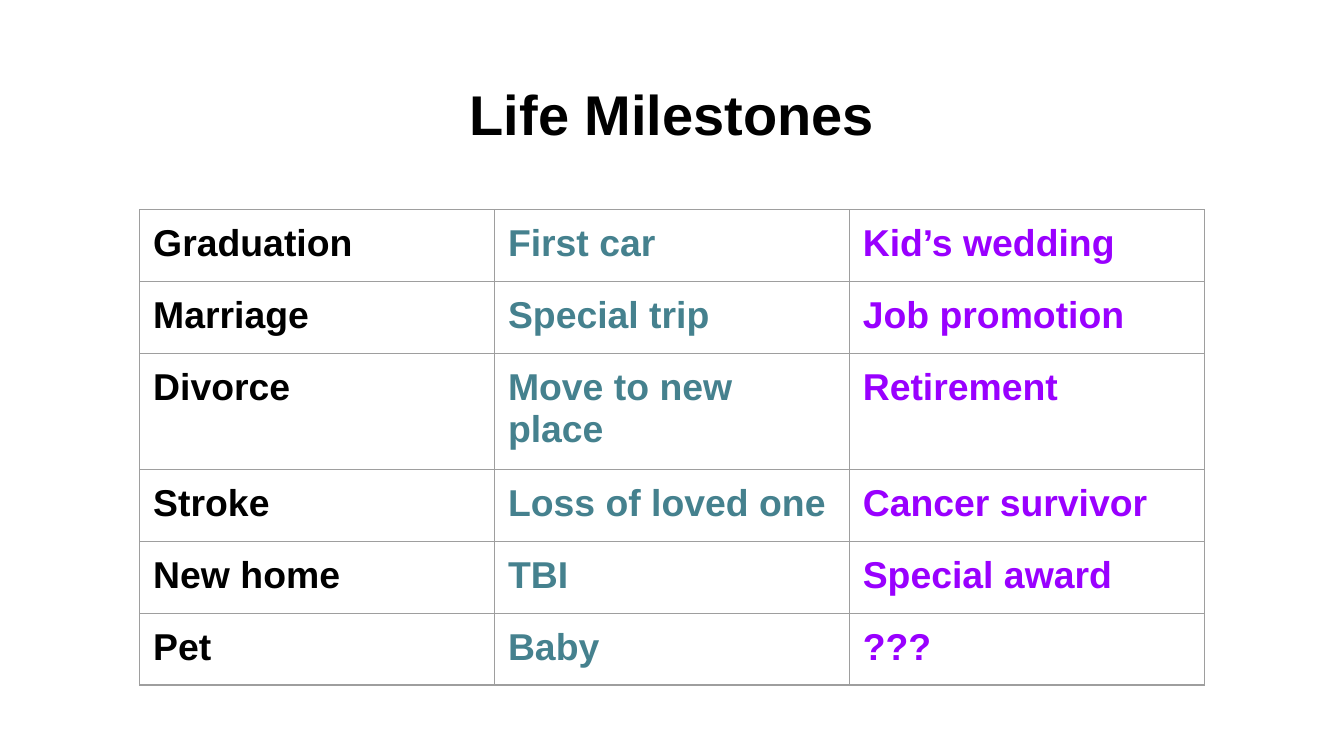
import pptx
import pptx.util
import pptx.dml.color
import pptx.enum.text
import lxml.etree
from pptx.util import Inches, Pt

TITLE = "Life Milestones"
COLUMNS = [
    ("000000", ["Graduation", "Marriage", "Divorce", "Stroke", "New home", "Pet"]),
    ("45818E", ["First car", "Special trip", "Move to new place",
                "Loss of loved one", "TBI", "Baby"]),
    ("9900FF", ["Kid’s wedding", "Job promotion", "Retirement",
                "Cancer survivor", "Special award", "???"]),
]
BORDER = "9E9E9E"
COLUMN_WIDTH = 2.64
ROW_HEIGHT = 0.42
INSET = Inches(0.1)


def rgb(value):
    return pptx.dml.color.RGBColor.from_string(value)


def write(paragraph, words, size, color):
    run = paragraph.add_run()
    run.text = words
    run.font.name = "Arial"
    run.font.size = Pt(size)
    run.font.bold = True
    run.font.color.rgb = rgb(color)


def set_insets(holder):
    holder.margin_left = holder.margin_right = INSET
    holder.margin_top = holder.margin_bottom = INSET


def add_borders(cell):
    namespace = "{http://schemas.openxmlformats.org/drawingml/2006/main}"
    properties = cell._tc.get_or_add_tcPr()
    for index, side in enumerate(("lnL", "lnR", "lnT", "lnB")):
        line = lxml.etree.Element(namespace + side, w=str(Pt(0.75)))
        fill = lxml.etree.SubElement(line, namespace + "solidFill")
        lxml.etree.SubElement(fill, namespace + "srgbClr", val=BORDER)
        properties.insert(index, line)


def add_title(slide):
    title = slide.shapes.add_textbox(
        Inches(0.34), Inches(0.49), Inches(9.32), Inches(0.63))
    frame = title.text_frame
    frame.word_wrap = True
    set_insets(frame)
    heading = frame.paragraphs[0]
    heading.alignment = pptx.enum.text.PP_ALIGN.CENTER
    write(heading, TITLE, 30, "000000")


def add_milestones(slide):
    row_count = len(COLUMNS[0][1])
    holder = slide.shapes.add_table(
        row_count, len(COLUMNS), Inches(1.04), Inches(1.56),
        Inches(COLUMN_WIDTH * len(COLUMNS)), Inches(ROW_HEIGHT * row_count))
    holder.height = Inches(3.53)
    milestones = holder.table
    milestones.first_row = False
    milestones.horz_banding = False
    for column, (color, events) in enumerate(COLUMNS):
        for row, event in enumerate(events):
            cell = milestones.cell(row, column)
            set_insets(cell)
            cell.fill.background()
            add_borders(cell)
            write(cell.text_frame.paragraphs[0], event, 20, color)


def main():
    deck = pptx.Presentation()
    deck.slide_width = Inches(10)
    deck.slide_height = deck.slide_width * 9 // 16
    slide = deck.slides.add_slide(deck.slide_layouts[6])
    add_title(slide)
    add_milestones(slide)
    deck.save("out.pptx")


if __name__ == "__main__":
    main()
